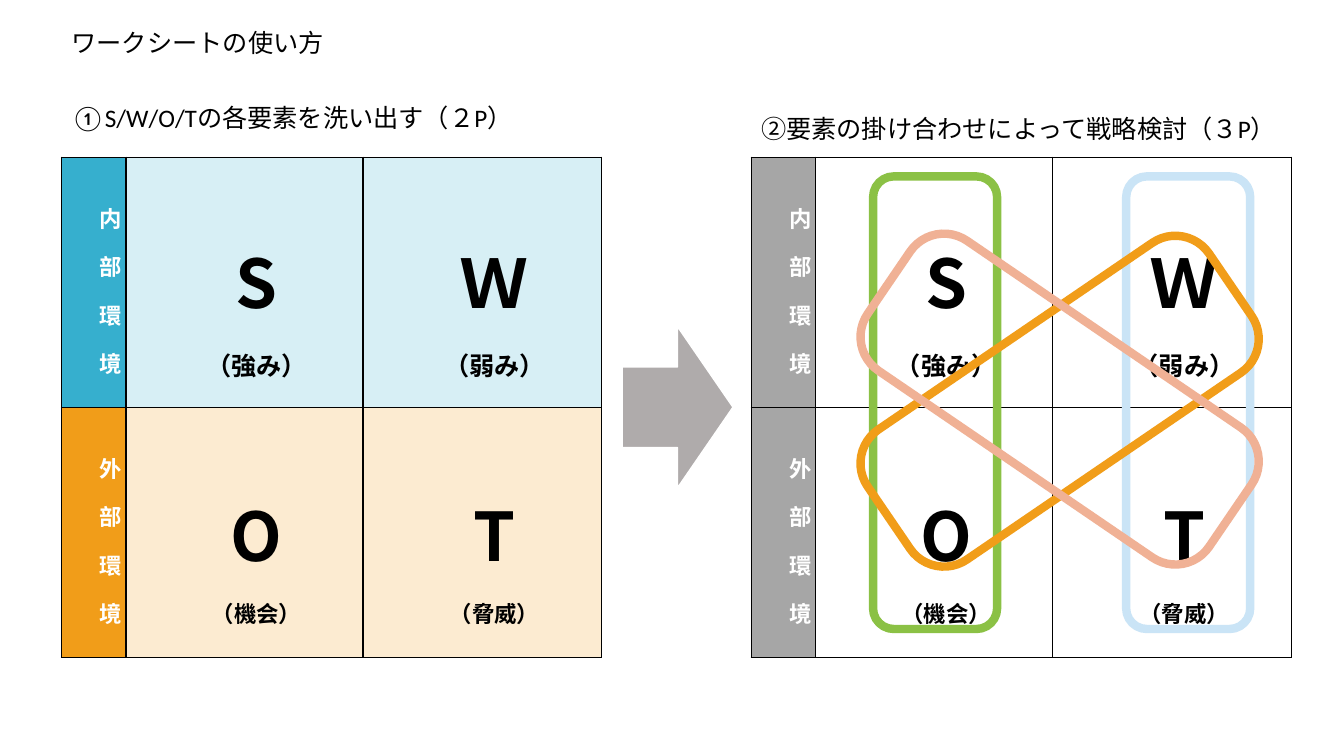
from lxml.etree import SubElement
from pptx import Presentation
from pptx.dml.color import RGBColor
from pptx.enum.shapes import MSO_SHAPE as Shape
from pptx.enum.text import MSO_ANCHOR as Anchor, PP_ALIGN as Align
from pptx.oxml import parse_xml
from pptx.oxml.ns import nsdecls, qn
from pptx.util import Pt

PX = 9144  # EMU, 100 px to the inch
BLACK = RGBColor(0x00, 0x00, 0x00)
WHITE = RGBColor(0xFF, 0xFF, 0xFF)
GREY = RGBColor(0xA6, 0xA6, 0xA6)
ARROW_GREY = RGBColor(0xAF, 0xAB, 0xAB)
BLUE = RGBColor(0x36, 0xAF, 0xCE)
PALE_BLUE = RGBColor(0xD7, 0xEF, 0xF5)
ORANGE = RGBColor(0xF1, 0x9D, 0x19)
PALE_ORANGE = RGBColor(0xFC, 0xEB, 0xD1)
GREEN = RGBColor(0x8B, 0xC1, 0x45)
SKY = RGBColor(0xCA, 0xE4, 0xF6)
SALMON = RGBColor(0xF0, 0xB1, 0x95)

SWOT_ROWS = [
    ("内部環境", [("S", "（強み）"), ("Ｗ", "（弱み）")], 18),
    ("外部環境", [("O", "（機会）"), ("T", "（脅威）")], 16),
]


class Deck:
    latin_font = "Calibri"
    asian_font = "Noto Sans CJK JP"
    heading_size = 18

    def __init__(self, width, height):
        self.file = Presentation()
        self.file.slide_width = width * PX
        self.file.slide_height = height * PX
        self.page = None

    def add_page(self):
        self.page = self.file.slides.add_slide(self.file.slide_layouts[5])

    def add_span(self, para, text, size, color, font, bold=False):
        span = para.add_run()
        span.text = text
        span.font.size = Pt(size)
        span.font.bold = bold
        span.font.name = font
        span.font.color.rgb = color
        SubElement(span.font._element, qn("a:ea"), typeface=self.asian_font)

    def fill_heading(self, box, text, left, top, width, height):
        box.left, box.top, box.width, box.height = (
            n * PX for n in (left, top, width, height))
        frame = box.text_frame
        frame.word_wrap = True
        frame.vertical_anchor = Anchor.TOP
        para = frame.paragraphs[0]
        para.alignment = Align.LEFT
        self.add_span(para, text, self.heading_size, BLACK, self.latin_font)

    def title(self, text, *place):
        self.fill_heading(self.page.shapes.title, text, *place)

    def heading(self, text, *place):
        box = self.page.shapes.add_textbox(0, 0, PX, PX)
        self.fill_heading(box, text, *place)

    def cell(self, cell, lines, color, fill, vertical=False):
        """Fill a table cell with (text, size) lines, one paragraph each."""
        properties = cell._tc.get_or_add_tcPr()
        for side in ("lnL", "lnR", "lnT", "lnB"):
            properties.append(parse_xml(
                f'<a:{side} {nsdecls("a")} w="12700"><a:solidFill>'
                f'<a:srgbClr val="{BLACK}"/></a:solidFill></a:{side}>'))
        if vertical:
            properties.set("vert", "eaVert")
        cell.fill.solid()
        cell.fill.fore_color.rgb = fill
        cell.vertical_anchor = Anchor.MIDDLE
        cell.margin_left = 38 * PX
        cell.margin_right = cell.margin_top = cell.margin_bottom = 14 * PX
        frame = cell.text_frame
        for index, (text, size) in enumerate(lines):
            para = frame.add_paragraph() if index else frame.paragraphs[0]
            para.alignment = Align.CENTER
            para.line_spacing = 1.5
            self.add_span(para, text, size, color, self.asian_font, bold=True)

    def swot_table(self, left, top, row_fills):
        """Draw the SWOT grid; row_fills gives (label, body) colours per row."""
        widths, row_height = (64, 235, 237), 248
        table = self.page.shapes.add_table(
            2, 3, left * PX, top * PX,
            sum(widths) * PX, 2 * row_height * PX).table
        table.first_row = table.horz_banding = False
        for column, width in zip(table.columns, widths):
            column.width = width * PX
        for row, (label, factors, note_size) in enumerate(SWOT_ROWS):
            table.rows[row].height = row_height * PX
            label_fill, body_fill = row_fills[row]
            self.cell(table.cell(row, 0), [(label, 16)], WHITE, label_fill,
                      vertical=True)
            for column, (letter, note) in enumerate(factors, start=1):
                self.cell(table.cell(row, column),
                          [(letter, 48), (note, note_size)], BLACK, body_fill)

    def shape(self, kind, left, top, width, height, line, weight, fill=None):
        shape = self.page.shapes.add_shape(
            kind, left * PX, top * PX, width * PX, height * PX)
        shape.shadow.inherit = False
        if fill is None:
            shape.fill.background()
        else:
            shape.fill.solid()
            shape.fill.fore_color.rgb = fill
        shape.line.color.rgb = line
        shape.line.width = Pt(weight)
        return shape

    def ring(self, left, top, width, height, color, angle=0, rounding=None):
        """Draw a rounded outline around the factors to be combined."""
        ring = self.shape(Shape.ROUNDED_RECTANGLE, left, top, width, height,
                          color, 6)
        ring.rotation = angle
        if rounding is not None:
            ring.adjustments[0] = rounding


def main():
    deck = Deck(1333, 750)
    deck.add_page()
    deck.title("ワークシートの使い方", 61, 22, 401, 40)

    deck.swot_table(61, 156, [(BLUE, PALE_BLUE), (ORANGE, PALE_ORANGE)])
    deck.swot_table(745, 156, [(GREY, WHITE)] * 2)

    for left, color in ((866, GREEN), (1117, SKY)):
        deck.ring(left, 175, 123, 449, color)
    for top, color, angle in ((320, ORANGE, -34.3), (318, SALMON, 34.3)):
        deck.ring(846, top, 410, 156, color, angle, rounding=0.26)

    deck.shape(Shape.RIGHT_ARROW, 617, 324, 110, 160, WHITE, 1, ARROW_GREY)
    deck.heading("①S/W/O/Tの各要素を洗い出す（２P）", 61, 97, 535, 40)
    deck.heading("②要素の掛け合わせによって戦略検討（３P）", 745, 108, 554, 40)
    deck.file.save("out.pptx")


if __name__ == "__main__":
    main()
